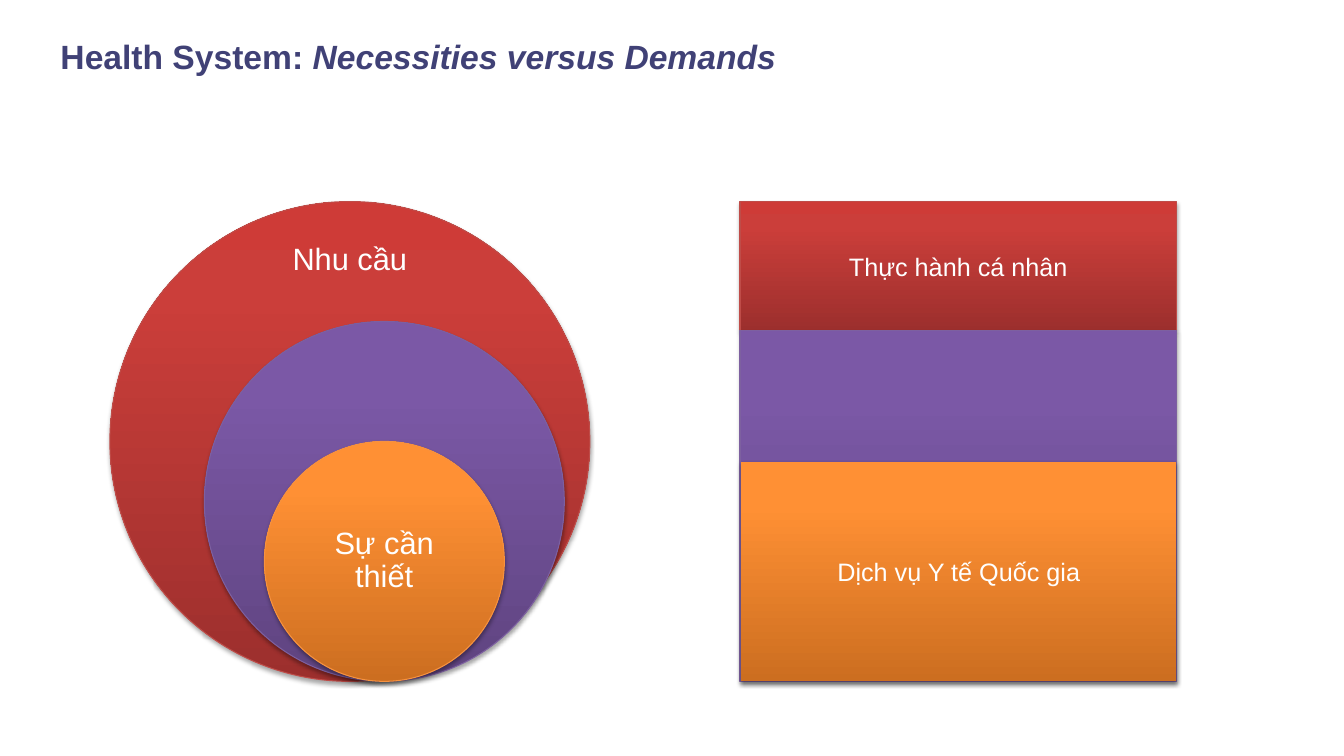
from dataclasses import dataclass
from typing import Optional

from lxml.etree import SubElement
from pptx import Presentation
from pptx.dml.color import RGBColor
from pptx.enum.shapes import MSO_SHAPE as Shape
from pptx.enum.text import MSO_ANCHOR as Anchor, MSO_AUTO_SIZE as AutoSize, PP_ALIGN as Align
from pptx.oxml.ns import qn
from pptx.util import Inches, Pt

COLORS = {"title": "404176", "text": "FFFFFF", "shadow": "000000"}
# Gradient stops from bottom to top, at 0, 80 and 100 percent
GRADIENTS = {
    "red": ("9C2F2D", "CB3E3A", "CE3B37"),
    "purple": ("5F4480", "7B58A6", "7C57A8"),
    "orange": ("CC6E20", "FF9034", "FF9136"),
}
OUTLINES = {"red": "BF4C48", "purple": "7D60A0", "orange": "F69240"}
STOPS = (0, 80, 100)

prs = Presentation()
prs.slide_width, prs.slide_height = Inches(13.33), Inches(7.5)


def col(n: float) -> int:
    """Percent of the slide width."""
    return round(prs.slide_width * n / 100)


def row(n: float) -> int:
    """Percent of the slide height."""
    return round(prs.slide_height * n / 100)


@dataclass
class Label:
    text: str
    left: float
    top: float
    width: float
    height: float


@dataclass
class Circle:
    tone: str
    center: float
    share: float
    label: Optional[Label] = None


@dataclass
class Band:
    tone: str
    left: float
    top: float
    bottom: float
    text: str = ""
    outlined: bool = True


BASE = 90.13       # common bottom edge, in rows
DIAMETER = 63.47   # largest circle, in rows
BAND_RIGHT = 87.54  # right edge of the bands, in columns

CIRCLES = [
    Circle("red", 26.03, 1, Label("Nhu cầu", 19.8, 29.73, 12.45, 9.47)),
    Circle("purple", 28.6, 0.75),
    Circle("orange", 28.6, 0.5, Label("Sự cần thiết", 22.28, 66.27, 12.6, 15.87)),
]
BANDS = [
    Band("red", 55.06, 26.67, 43.73, "Thực hành cá nhân"),
    Band("purple", 55.06, 43.73, BASE),
    Band("orange", 55.14, 61.07, BASE, "Dịch vụ Y tế Quốc gia", outlined=False),
]


def add_run(p, text: str, *, size: float, color: str = "text",
            bold: bool = False, italic: bool = False) -> None:
    r = p.add_run()
    r.text = text
    font = r.font
    font.name, font.size, font.bold, font.italic = "Arial", Pt(size), bold, italic
    font.color.rgb = RGBColor.from_string(COLORS[color])


def add_color(parent, value: str):
    return SubElement(parent, qn("a:srgbClr"), val=value)


def add_glossy(slide, kind: Shape, box: tuple, tone: str, outlined: bool = True):
    """Shape with a vertical gradient and a soft shadow below."""
    sp = slide.shapes.add_shape(kind, *box)
    sp.fill.gradient()
    sp.fill.gradient_angle = 90
    stops = sp.fill._fill._gradFill.find(qn("a:gsLst"))
    for old in list(stops):
        stops.remove(old)
    for pos, value in zip(STOPS, GRADIENTS[tone]):
        add_color(SubElement(stops, qn("a:gs"), pos=str(pos * 1000)), value)
    if outlined:
        sp.line.color.rgb = RGBColor.from_string(OUTLINES[tone])
        sp.line.width = Pt(0.75)
    else:
        sp.line.fill.background()
    sp.shadow.inherit = False
    effects = sp._element.spPr.find(qn("a:effectLst"))
    shadow = SubElement(effects, qn("a:outerShdw"), blurRad=str(Pt(3.1)),
                        dist=str(Pt(1.8)), dir="5400000", rotWithShape="0")
    SubElement(add_color(shadow, COLORS["shadow"]), qn("a:alpha"), val="35000")
    return sp


def add_label(slide, label: Label) -> None:
    tf = slide.shapes.add_textbox(col(label.left), row(label.top),
                                  col(label.width), row(label.height)).text_frame
    tf.word_wrap, tf.vertical_anchor = True, Anchor.MIDDLE
    tf.margin_left = tf.margin_right = tf.margin_top = tf.margin_bottom = Inches(0.17)
    p = tf.paragraphs[0]
    p.alignment, p.line_spacing = Align.CENTER, 0.9
    add_run(p, label.text, size=22)


def add_circle(slide, circle: Circle) -> None:
    size = row(DIAMETER * circle.share)
    box = (col(circle.center) - size // 2, row(BASE) - size, size, size)
    add_glossy(slide, Shape.OVAL, box, circle.tone)
    if circle.label:
        add_label(slide, circle.label)


def add_band(slide, band: Band) -> None:
    box = (col(band.left), row(band.top),
           col(BAND_RIGHT - band.left), row(band.bottom - band.top))
    sp = add_glossy(slide, Shape.RECTANGLE, box, band.tone, band.outlined)
    if band.text:
        tf = sp.text_frame
        tf.word_wrap, tf.vertical_anchor = True, Anchor.MIDDLE
        p = tf.paragraphs[0]
        p.alignment = Align.CENTER
        add_run(p, band.text, size=18)


def add_title(slide) -> None:
    sp = slide.shapes.title
    sp.left, sp.top, sp.width, sp.height = col(3.75), row(3.07), col(75.83), row(8.8)
    tf = sp.text_frame
    tf.auto_size, tf.word_wrap, tf.vertical_anchor = AutoSize.NONE, True, Anchor.MIDDLE
    p = tf.paragraphs[0]
    p.alignment = Align.LEFT
    add_run(p, "Health System: ", size=24, color="title", bold=True)
    add_run(p, "Necessities versus Demands", size=24, color="title", bold=True, italic=True)


def main() -> None:
    slide = prs.slides.add_slide(prs.slide_layouts[5])
    add_title(slide)
    # Nested circles on the left
    for circle in CIRCLES:
        add_circle(slide, circle)
    # Stacked bands on the right
    for band in BANDS:
        add_band(slide, band)
    prs.save("out.pptx")


if __name__ == "__main__":
    main()
